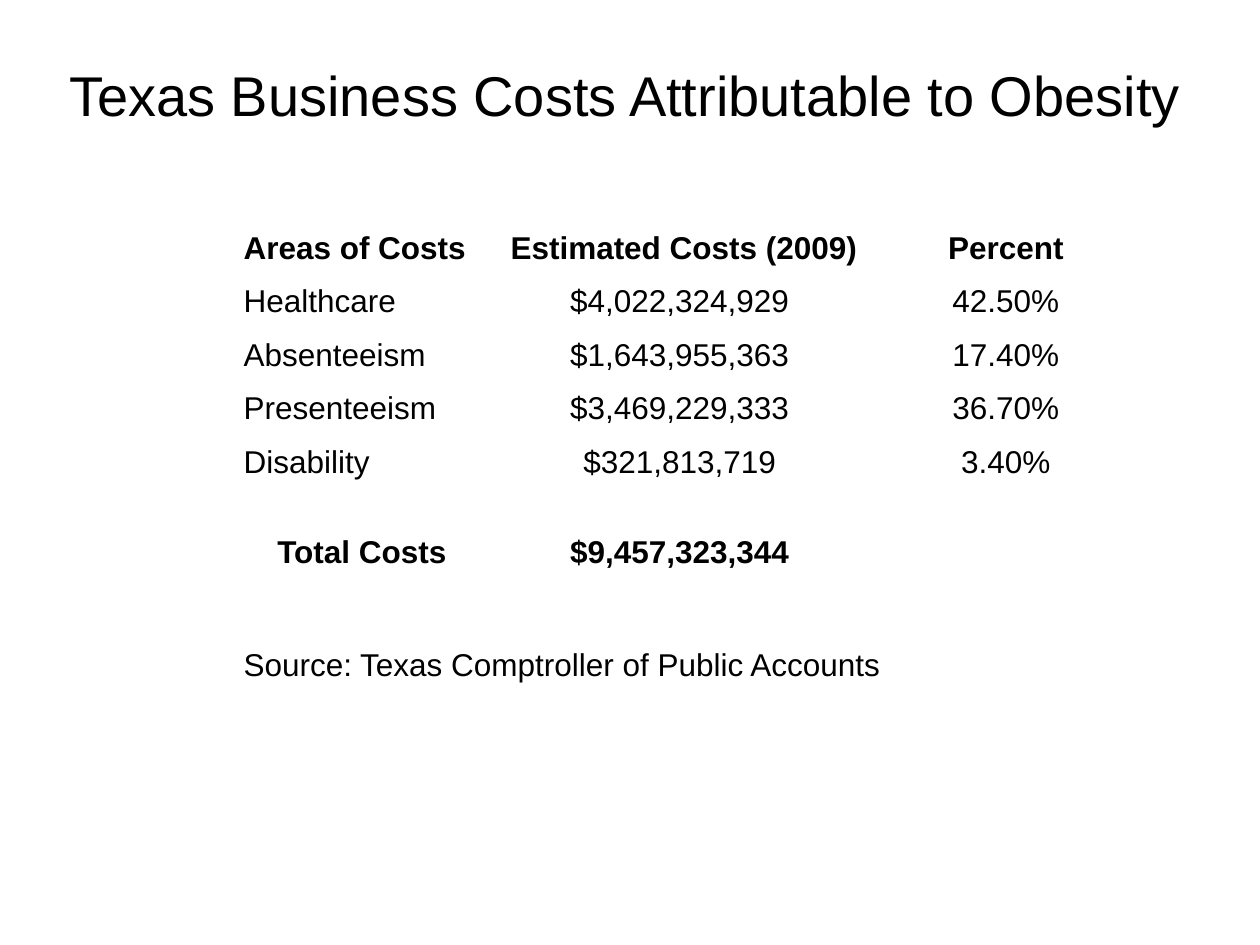
from pptx import Presentation
from pptx.dml.color import RGBColor
from pptx.enum.text import MSO_ANCHOR, PP_ALIGN
from pptx.util import Cm, Pt

BLACK = RGBColor(0, 0, 0)
FONT_NAME = "Arial"
LEFT, CENTER = PP_ALIGN.LEFT, PP_ALIGN.CENTER
MIDDLE = MSO_ANCHOR.MIDDLE
COLUMN_WIDTHS = [4.83, 8.15, 4.83]
ROW_HEIGHTS = [1.08] * 5 + [2.56, 2.64]
COSTS = [
    ("Areas of Costs", "Estimated Costs (2009)", "Percent"),
    ("Healthcare", "$4,022,324,929", "42.50%"),
    ("Absenteeism", "$1,643,955,363", "17.40%"),
    ("Presenteeism", "$3,469,229,333", "36.70%"),
    ("Disability", "$321,813,719", "3.40%"),
    ("Total Costs", "$9,457,323,344", ""),
]
HEADER_ROW, TOTAL_ROW, SOURCE_ROW = 0, 5, 6
AMOUNT_COLUMN = 1


def format_paragraph(paragraph, size, alignment, bold=False):
    paragraph.alignment = alignment
    font = paragraph.font
    font.name = FONT_NAME
    font.size = Pt(size)
    font.bold = bold
    font.color.rgb = BLACK


def set_margins(frame, side, bottom=0):
    frame.margin_left = frame.margin_right = frame.margin_top = Cm(side)
    frame.margin_bottom = Cm(bottom)


def add_title(slide, text):
    title = slide.shapes.title
    title.left, title.top = Cm(0.64), Cm(0.84)
    title.width, title.height = Cm(23.93), Cm(2.11)
    frame = title.text_frame
    frame.text = text
    frame.word_wrap = True
    frame.vertical_anchor = MIDDLE
    set_margins(frame, 0)
    format_paragraph(frame.paragraphs[0], 32, CENTER)


def fill_cell(cell, text, alignment, bold=False):
    cell.text = text
    cell.vertical_anchor = MIDDLE
    set_margins(cell, 0.03)
    format_paragraph(cell.text_frame.paragraphs[0], 18, alignment, bold)


def add_cost_table(slide):
    frame = slide.shapes.add_table(
        len(ROW_HEIGHTS), len(COLUMN_WIDTHS), Cm(4.88), Cm(4.45),
        Cm(sum(COLUMN_WIDTHS)), Cm(sum(ROW_HEIGHTS)))
    table = frame.table
    table.first_row = table.horz_banding = False
    for column, width in zip(table.columns, COLUMN_WIDTHS):
        column.width = Cm(width)
    for row, height in zip(table.rows, ROW_HEIGHTS):
        row.height = Cm(height)
    for cell in table.iter_cells():
        cell.fill.background()

    for row, values in enumerate(COSTS):
        for column, text in enumerate(values):
            cell = table.cell(row, column)
            alignment = LEFT if column == 0 and row != TOTAL_ROW else CENTER
            fill_cell(cell, text, alignment, row in (HEADER_ROW, TOTAL_ROW))
            if column == AMOUNT_COLUMN and row != HEADER_ROW:
                cell.margin_right = Cm(0.2)

    source = table.cell(SOURCE_ROW, 0)
    source.merge(table.cell(SOURCE_ROW, len(COLUMN_WIDTHS) - 1))
    fill_cell(source, "Source: Texas Comptroller of Public Accounts", LEFT)
    source.margin_bottom = Cm(0.64)


def main():
    deck = Presentation()
    deck.slide_width, deck.slide_height = Cm(25.4), Cm(19.05)
    slide = deck.slides.add_slide(deck.slide_layouts[5])
    add_title(slide, "Texas Business Costs Attributable to Obesity")
    add_cost_table(slide)
    deck.save("out.pptx")


if __name__ == "__main__":
    main()
